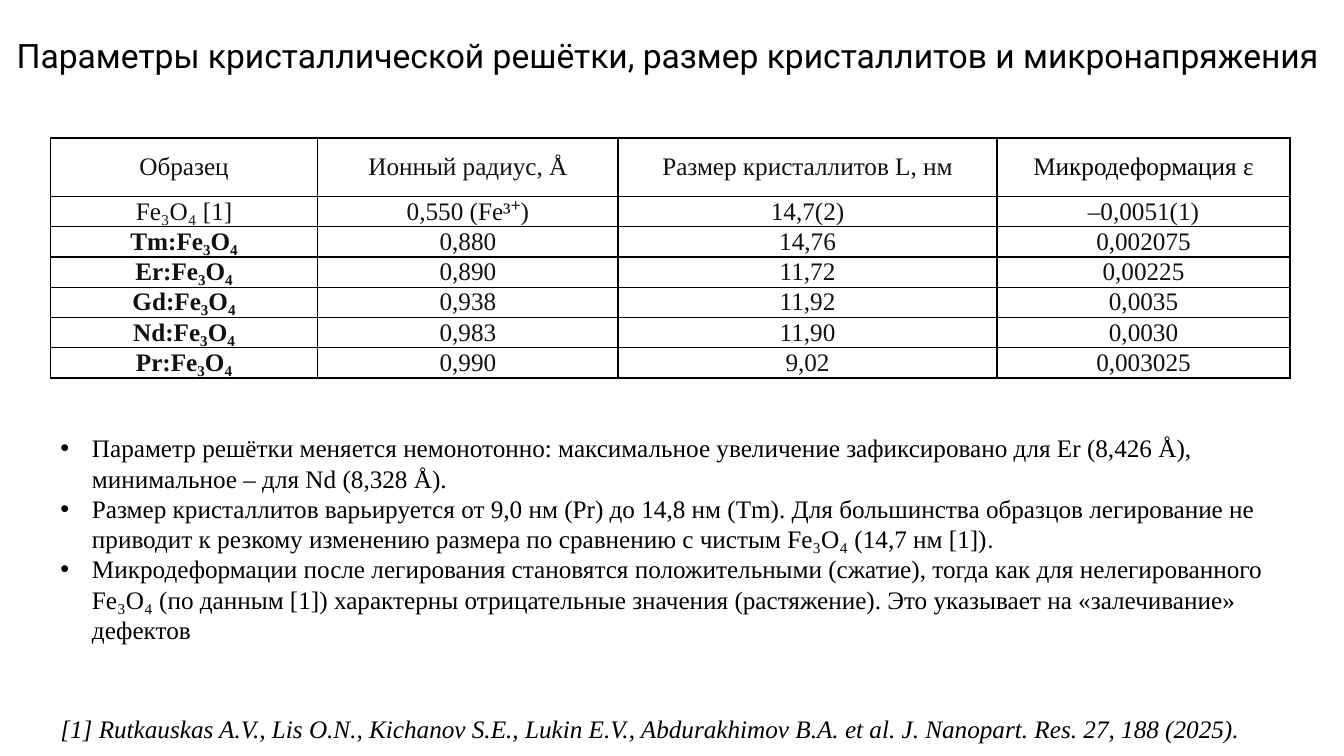
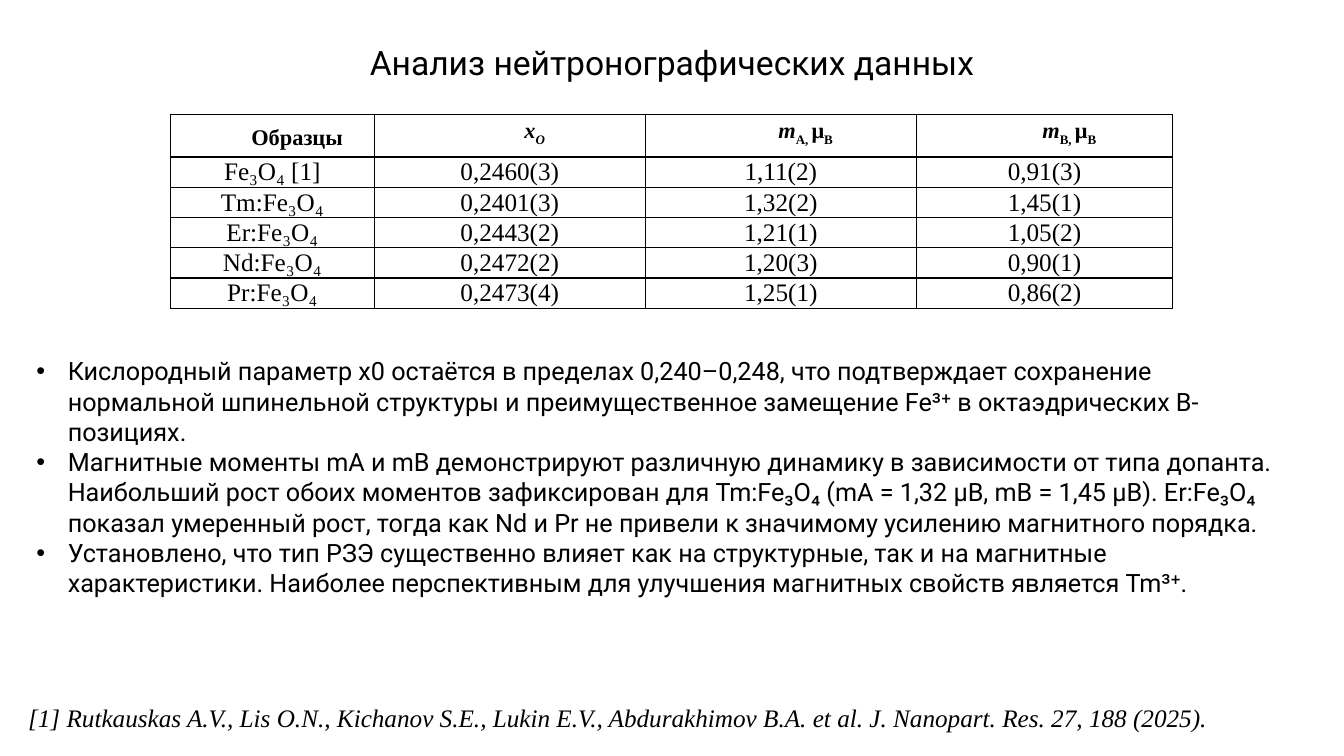
from dataclasses import dataclass

from lxml.etree import SubElement
from pptx import Presentation
from pptx.dml.color import RGBColor
from pptx.enum.text import MSO_ANCHOR, MSO_AUTO_SIZE, PP_ALIGN
from pptx.oxml.ns import qn
from pptx.util import Pt

BLACK = RGBColor(0x00, 0x00, 0x00)
INK = RGBColor(0x0F, 0x11, 0x15)
SANS = "Roboto"
SERIF = "Times New Roman"
TITLE_SIZE, TEXT_SIZE, HEADER_SIZE = 24, 18, 16
BULLET_INDENT = 22.5
ROW_HEIGHT = 21.6
CITATION = (
    "[1] Rutkauskas A.V., Lis O.N., Kichanov S.E., Lukin E.V., "
    "Abdurakhimov B.A. et al. J. Nanopart. Res. 27, 188 (2025)."
)


@dataclass
class Run:
    """A piece of text with its own emphasis."""

    text: str
    bold: bool = False
    italic: bool = False
    subscript: bool = False
    font: str | None = None
    color: RGBColor | None = None
    size: float | None = None


class Deck:
    """Holds the style, the presentation and the current slide."""

    def __init__(self):
        """Start an empty widescreen presentation."""
        self.presentation = Presentation()
        self.presentation.slide_width = Pt(960)
        self.presentation.slide_height = Pt(540)
        self.slide = None

    def add_slide(self):
        """Start a slide with a title and a list."""
        layout = self.presentation.slide_layouts[1]
        self.slide = self.presentation.slides.add_slide(layout)

    def add_runs(self, paragraph, content, font=SERIF, size=TEXT_SIZE, color=BLACK):
        """Fill a paragraph with a string or a list of runs."""
        runs = [Run(content)] if isinstance(content, str) else content
        paragraph.space_before = Pt(0)
        for part in runs:
            run = paragraph.add_run()
            run.text = part.text
            run.font.name = part.font or font
            run.font.size = Pt(part.size or size)
            run.font.bold = part.bold
            run.font.italic = part.italic
            run.font.color.rgb = part.color or color
            if part.subscript:
                run.font._element.set("baseline", "-25000")

    def indent(self, paragraph, margin, first_line):
        """Set the left margin and the first-line indent."""
        properties = paragraph._p.get_or_add_pPr()
        properties.set("marL", str(Pt(margin)))
        properties.set("indent", str(Pt(first_line)))

    def place(self, shape, left, top, width, height):
        """Move a text shape and return its wrapped, top-anchored frame."""
        shape.left, shape.top = Pt(left), Pt(top)
        shape.width, shape.height = Pt(width), Pt(height)
        frame = shape.text_frame
        frame.word_wrap = True
        frame.auto_size = MSO_AUTO_SIZE.NONE
        frame.vertical_anchor = MSO_ANCHOR.TOP
        return frame

    def title(self, text, left, top):
        """Set the centred slide title."""
        frame = self.place(self.slide.shapes.title, left, top, 960, 36)
        paragraph = frame.paragraphs[0]
        paragraph.alignment = PP_ALIGN.CENTER
        self.add_runs(paragraph, text, SANS, TITLE_SIZE)

    def bullets(self, items, left, top, width, height, font):
        """Fill the bulleted list."""
        frame = self.place(self.slide.placeholders[1], left, top, width, height)
        for index, item in enumerate(items):
            paragraph = frame.add_paragraph() if index else frame.paragraphs[0]
            self.indent(paragraph, BULLET_INDENT, -BULLET_INDENT)
            self.add_runs(paragraph, item, font)

    def citation(self, left, top):
        """Add the literature reference at the foot."""
        box = self.slide.shapes.add_textbox(0, 0, 0, 0)
        frame = self.place(box, left, top, 900, 29)
        self.add_runs(frame.paragraphs[0], [Run(CITATION, italic=True)])

    def border(self, cell):
        """Draw thin black lines round a cell."""
        properties = cell._tc.get_or_add_tcPr()
        for side in ("lnL", "lnR", "lnT", "lnB"):
            line = SubElement(properties, qn(f"a:{side}"), w=str(Pt(1)))
            fill = SubElement(line, qn("a:solidFill"))
            SubElement(fill, qn("a:srgbClr"), val=str(BLACK))

    def table(self, rows, left, top, widths, header_height, color):
        """Add a plain bordered table and return it."""
        heights = [header_height] + [ROW_HEIGHT] * (len(rows) - 1)
        table = self.slide.shapes.add_table(
            len(rows), len(widths), Pt(left), Pt(top), Pt(sum(widths)), Pt(sum(heights))
        ).table
        table.first_row = table.horz_banding = False
        for column, width in zip(table.columns, widths):
            column.width = Pt(width)
        for row, height, contents in zip(table.rows, heights, rows):
            row.height = Pt(height)
            for cell, content in zip(row.cells, contents):
                cell.margin_left = cell.margin_right = Pt(0)
                cell.margin_top = cell.margin_bottom = Pt(0)
                cell.vertical_anchor = MSO_ANCHOR.MIDDLE
                self.border(cell)
                cell.fill.background()
                paragraph = cell.text_frame.paragraphs[0]
                paragraph.alignment = PP_ALIGN.CENTER
                self.add_runs(paragraph, content, color=color)
        return table

    def indent_header(self, table):
        """Give the header cells a first-line indent and looser lines."""
        for index, cell in enumerate(table.rows[0].cells):
            cell.margin_left = cell.margin_right = Pt(5)
            cell.vertical_anchor = MSO_ANCHOR.TOP if index else MSO_ANCHOR.MIDDLE
            paragraph = cell.text_frame.paragraphs[0]
            paragraph.line_spacing = 1.15
            self.indent(paragraph, 0, 35.4)


def header_run(text, italic=False, subscript=False):
    """Return a bold run in the header size."""
    return Run(text, bold=True, italic=italic, subscript=subscript, size=HEADER_SIZE)


def moment_header(site):
    """Return the runs of a magnetic moment heading."""
    return [
        header_run("m", italic=True),
        header_run(f"{site}, ", subscript=True),
        header_run("μ"),
        header_run("B", subscript=True),
    ]


def lattice_slide(deck):
    """Build the slide on crystallite size and microstrain."""
    deck.add_slide()
    deck.title(
        "Параметры кристаллической решётки, размер кристаллитов и микронапряжения", -3, 21
    )
    doped = [
        ("Tm", "0,880", "14,76", "0,002075"),
        ("Er", "0,890", "11,72", "0,00225"),
        ("Gd", "0,938", "11,92", "0,0035"),
        ("Nd", "0,983", "11,90", "0,0030"),
        ("Pr", "0,990", "9,02", "0,003025"),
    ]
    strain = [Run("М"), Run("икродеформация ", color=BLACK), Run("ε")]
    rows = [
        ("Образец", "Ионный радиус, Å", "Размер кристаллитов L, нм", strain),
        ("Fe₃O₄ [1]", "0,550 (Fe³⁺)", "14,7(2)", "–0,0051(1)"),
    ]
    rows += [([Run(f"{metal}:Fe₃O₄", bold=True)], *values) for metal, *values in doped]
    deck.table(rows, 36, 98.6, [191, 214.5, 270.7, 209.3], 41.8, INK)
    deck.bullets(
        [
            "Параметр решётки меняется немонотонно: максимальное увеличение "
            "зафиксировано для Er (8,426 Å), минимальное – для Nd (8,328 Å).",
            [
                Run(
                    "Размер кристаллитов варьируется от 9,0 нм (Pr) до 14,8 нм (Tm). "
                    "Для большинства образцов легирование не приводит к резкому "
                    "изменению размера по сравнению с чистым Fe₃O₄ (14,7 нм [1])"
                ),
                Run(".", font=SANS),
            ],
            "Микродеформации после легирования становятся положительными (сжатие), "
            "тогда как для нелегированного Fe₃O₄ (по данным [1]) характерны "
            "отрицательные значения (растяжение). Это указывает на «залечивание» дефектов",
        ],
        36, 305.5, 885.6, 160, SERIF,
    )
    deck.citation(36, 506)


def neutron_slide(deck):
    """Build the slide on neutron diffraction data."""
    deck.add_slide()
    deck.title("Анализ нейтронографических данных", 0, 26.6)
    rows = [
        (
            [header_run("Образцы")],
            [header_run("x", italic=True), header_run("O", italic=True, subscript=True)],
            moment_header("A"),
            moment_header("B"),
        ),
        ("Fe₃O₄ [1]", "0,2460(3)", "1,11(2)", "0,91(3)"),
        ("Tm:Fe₃O₄", "0,2401(3)", "1,32(2)", "1,45(1)"),
        ("Er:Fe₃O₄", "0,2443(2)", "1,21(1)", "1,05(2)"),
        ("Nd:Fe₃O₄", "0,2472(2)", "1,20(3)", "0,90(1)"),
        ("Pr:Fe₃O₄", "0,2473(4)", "1,25(1)", "0,86(2)"),
    ]
    table = deck.table(rows, 121.7, 81.8, [145.7, 193.6, 193.6, 183.2], 30.4, BLACK)
    deck.indent_header(table)
    deck.bullets(
        [
            "Кислородный параметр x0 остаётся в пределах 0,240–0,248, что подтверждает "
            "сохранение нормальной шпинельной структуры и преимущественное замещение "
            "Fe³⁺ в октаэдрических B-позициях.",
            "Магнитные моменты mA и mB демонстрируют различную динамику в зависимости "
            "от типа допанта. Наибольший рост обоих моментов зафиксирован для Tm:Fe₃O₄ "
            "(mA = 1,32 μB, mB = 1,45 μB). Er:Fe₃O₄ показал умеренный рост, тогда как "
            "Nd и Pr не привели к значимому усилению магнитного порядка.",
            "Установлено, что тип РЗЭ существенно влияет как на структурные, так и на "
            "магнитные характеристики. Наиболее перспективным для улучшения магнитных "
            "свойств является Tm³⁺.",
        ],
        18.7, 250.5, 915, 196, SANS,
    )
    deck.citation(13, 498.2)


def main():
    """Build and save the presentation."""
    deck = Deck()
    lattice_slide(deck)
    neutron_slide(deck)
    deck.presentation.save("out.pptx")


if __name__ == "__main__":
    main()
